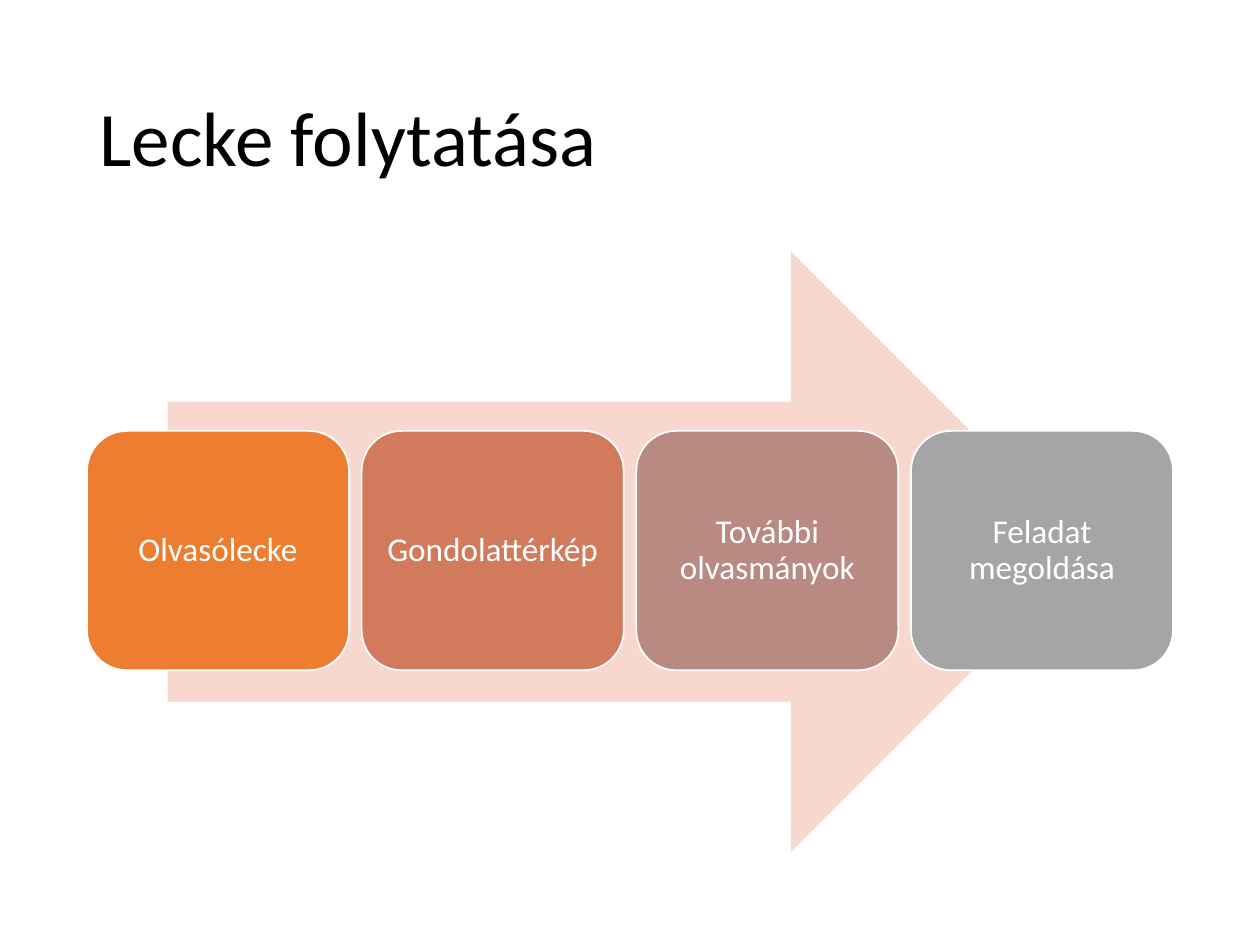
"""Build the lesson continuation slide: four steps on a wide arrow."""
from pptx import Presentation
from pptx.dml.color import RGBColor
from pptx.enum.shapes import MSO_SHAPE as SHAPE
from pptx.enum.text import MSO_ANCHOR as ANCHOR, PP_ALIGN as ALIGN
from pptx.util import Inches, Pt

COLORS = {
    "text": "000000",
    "white": "FFFFFF",
    "arrow": "F8D7CE",
    "orange": "ED7D31",
    "clay": "D17B5C",
    "rose": "B98A82",
    "gray": "A5A5A5",
}
STEPS = [
    ("Olvasólecke", "orange"),
    ("Gondolattérkép", "clay"),
    ("További olvasmányok", "rose"),
    ("Feladat megoldása", "gray"),
]
LEFT, STEP_TOP = 0.69, 3.42
STEP_W, STEP_H, PITCH = 2.08, 1.9, 2.18


class Deck:
    font = "Calibri"

    def __init__(self, width, height):
        self.prs = Presentation()
        self.prs.slide_width = Inches(width)
        self.prs.slide_height = Inches(height)
        self.s = self.prs.slides.add_slide(self.prs.slide_layouts[5])

    def color(self, name):
        return RGBColor.from_string(COLORS[name])

    def add_text(self, tf, text, size, color, align):
        tf.word_wrap = True
        tf.vertical_anchor = ANCHOR.MIDDLE
        p = tf.paragraphs[0]
        p.alignment = align
        p.line_spacing = 0.9
        r = p.add_run()
        r.text = text
        r.font.name = self.font
        r.font.size = Pt(size)
        r.font.color.rgb = self.color(color)

    def title(self, text, x, y, w, h):
        sp = self.s.shapes.title
        sp.left, sp.top, sp.width, sp.height = map(Inches, (x, y, w, h))
        self.add_text(sp.text_frame, text, 44, "text", ALIGN.LEFT)

    def shape(self, kind, fill, x, y, w, h):
        sp = self.s.shapes.add_shape(kind, *map(Inches, (x, y, w, h)))
        sp.shadow.inherit = False
        sp.fill.solid()
        sp.fill.fore_color.rgb = self.color(fill)
        sp.line.fill.background()
        return sp

    def step(self, text, fill, x, y, w, h):
        sp = self.shape(SHAPE.ROUNDED_RECTANGLE, fill, x, y, w, h)
        sp.line.color.rgb = self.color("white")
        sp.line.width = Pt(1)
        tf = sp.text_frame
        tf.margin_left = tf.margin_right = Inches(0.08)
        tf.margin_top = tf.margin_bottom = Inches(0.08)
        self.add_text(tf, text, 19, "white", ALIGN.CENTER)


def main():
    deck = Deck(10, 7.5)
    deck.title("Lecke folytatása", LEFT, 0.4, 8.62, 1.45)
    deck.shape(SHAPE.RIGHT_ARROW, "arrow", 1.33, 2, 7.33, 4.76)
    for i, (text, fill) in enumerate(STEPS):
        deck.step(text, fill, LEFT + i * PITCH, STEP_TOP, STEP_W, STEP_H)
    deck.prs.save("out.pptx")


if __name__ == "__main__":
    main()
